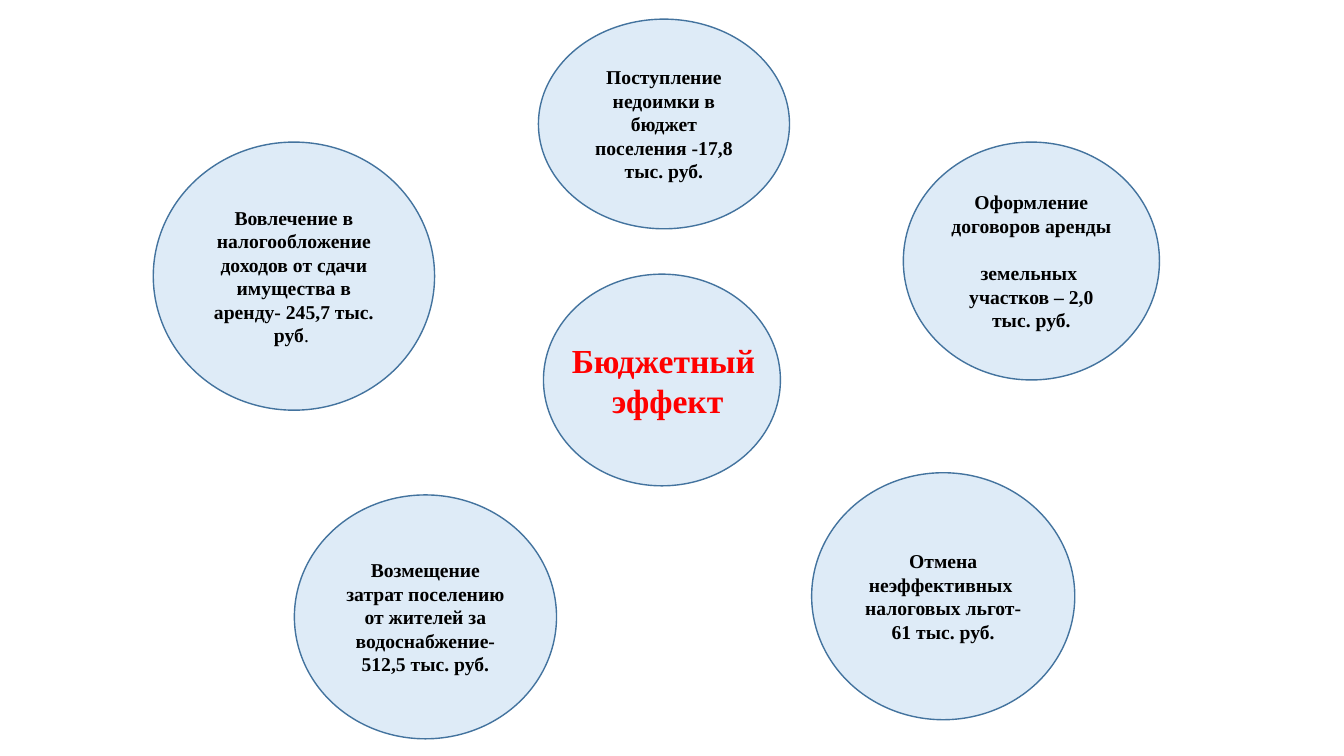
"""Build the slide of budget effects arranged around a central title."""
from dataclasses import dataclass

from pptx import Presentation
from pptx.dml.color import RGBColor
from pptx.enum.shapes import MSO_SHAPE
from pptx.enum.text import MSO_ANCHOR, MSO_AUTO_SIZE, PP_ALIGN
from pptx.slide import Slide
from pptx.text.text import TextFrame
from pptx.util import Emu, Pt

PALE_BLUE = RGBColor(0xDE, 0xEB, 0xF7)
OUTLINE_BLUE = RGBColor(0x43, 0x73, 0x9E)
BLACK = RGBColor(0x00, 0x00, 0x00)
RED = RGBColor(0xFF, 0x00, 0x00)
FONT = "Times New Roman"
EMU_PER_PX = 9144


@dataclass(frozen=True)
class Span:
    text: str
    bold: bool = True


@dataclass(frozen=True)
class Para:
    spans: tuple[Span, ...]
    space_before: int = 0


@dataclass(frozen=True)
class Circle:
    left: int
    top: int
    width: int
    height: int
    paras: tuple[Para, ...] = ()


def plain(text: str, space_before: int = 0) -> Para:
    return Para((Span(text),), space_before)


CIRCLES = (
    Circle(152, 141, 279, 266, (
        Para((
            Span("Вовлечение в налогообложение доходов от сдачи имущества в аренду- 245,7 тыс. руб"),
            Span(". ", bold=False),
        )),
    )),
    Circle(539, 272, 235, 210),
    Circle(805, 469, 261, 245, (
        plain("Отмена неэффективных "),
        plain("налоговых льгот- 61 тыс. руб."),
    )),
    Circle(896, 141, 254, 236, (
        plain("Оформление договоров аренды"),
        plain("земельных ", space_before=17),
        plain("участков – 2,0 тыс. руб."),
    )),
    Circle(534, 19, 249, 208, (
        plain("Поступление недоимки в бюджет поселения -17,8 тыс. руб."),
    )),
    Circle(292, 491, 260, 242, (
        plain("Возмещение затрат поселению от жителей за водоснабжение- 512,5 тыс. руб."),
    )),
)
TITLE_PARAS = (plain("Бюджетный"), plain(" эффект"))


def px(length: int) -> Emu:
    return Emu(length * EMU_PER_PX)


def write_paras(frame: TextFrame, paras: tuple[Para, ...], size: int, color: RGBColor) -> None:
    for index, para in enumerate(paras):
        paragraph = frame.add_paragraph() if index else frame.paragraphs[0]
        paragraph.alignment = PP_ALIGN.CENTER
        paragraph.line_spacing = 1.0
        paragraph.space_before = Pt(para.space_before)
        for span in para.spans:
            run = paragraph.add_run()
            run.text = span.text
            run.font.name = FONT
            run.font.size = Pt(size)
            run.font.bold = span.bold
            run.font.color.rgb = color


def draw_circle(page: Slide, circle: Circle) -> None:
    shape = page.shapes.add_shape(
        MSO_SHAPE.OVAL, px(circle.left), px(circle.top), px(circle.width), px(circle.height)
    )
    shape.shadow.inherit = False
    shape.fill.solid()
    shape.fill.fore_color.rgb = PALE_BLUE
    shape.line.color.rgb = OUTLINE_BLUE
    shape.line.width = Pt(1)
    frame = shape.text_frame
    frame.word_wrap = True
    frame.vertical_anchor = MSO_ANCHOR.MIDDLE
    write_paras(frame, circle.paras, 14, BLACK)


def place_title(page: Slide) -> None:
    title = page.shapes.title
    title.left, title.top, title.width, title.height = px(556), px(332), px(204), px(91)
    title.fill.solid()
    title.fill.fore_color.rgb = PALE_BLUE
    frame = title.text_frame
    frame.word_wrap = False
    frame.auto_size = MSO_AUTO_SIZE.NONE
    frame.vertical_anchor = MSO_ANCHOR.TOP
    write_paras(frame, TITLE_PARAS, 24, RED)
    title.element.getparent().append(title.element)


def main() -> None:
    deck = Presentation()
    deck.slide_width, deck.slide_height = px(1333), px(750)
    page = deck.slides.add_slide(deck.slide_layouts.get_by_name("Title Only"))
    for circle in CIRCLES:
        draw_circle(page, circle)
    place_title(page)
    deck.save("out.pptx")


if __name__ == "__main__":
    main()
